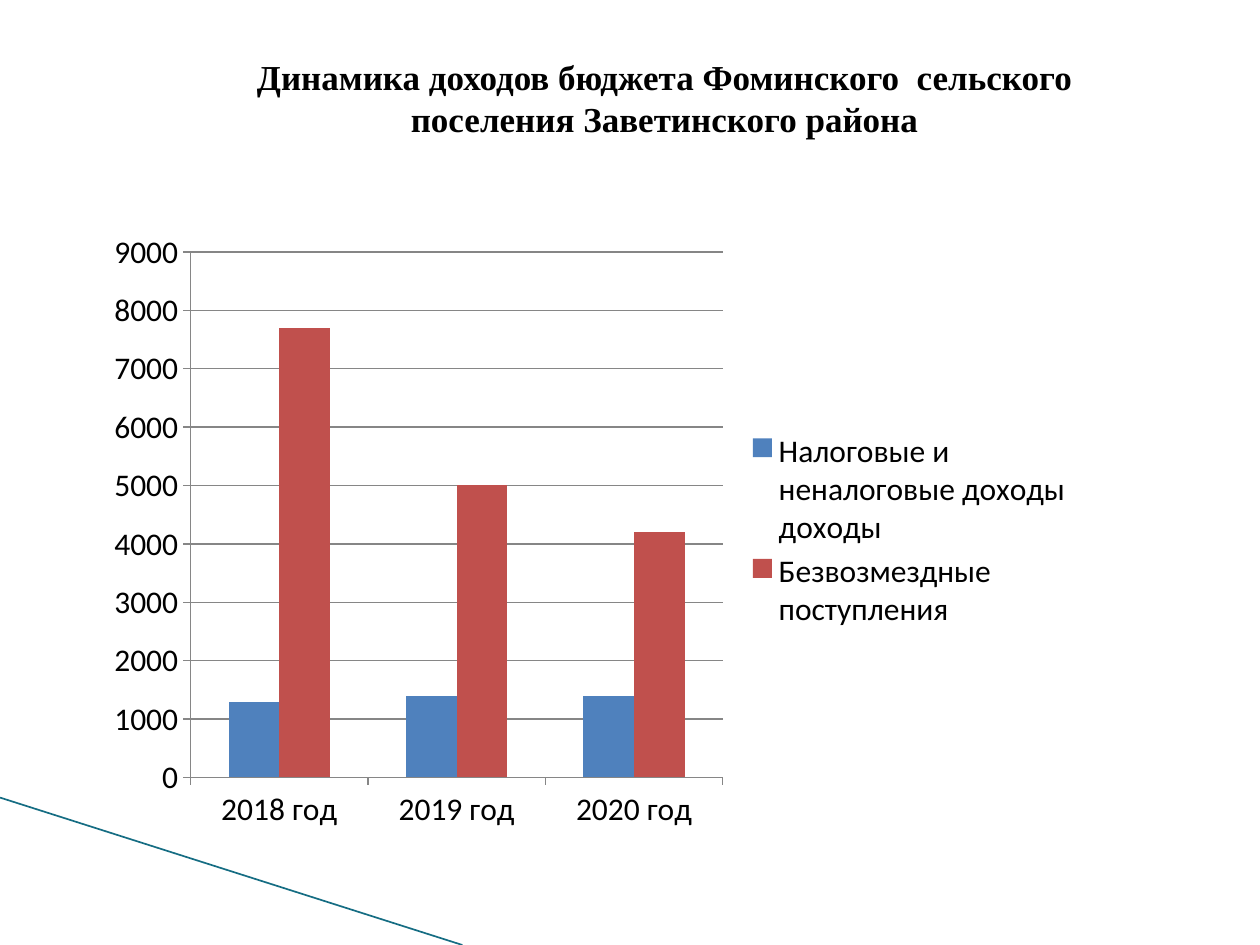
import pptx
import pptx.chart.data
import pptx.dml.color
import pptx.enum.chart
import pptx.enum.shapes
import pptx.enum.text
import pptx.oxml
import pptx.util
from pptx.util import Inches

# Content
TITLE = "Динамика доходов бюджета Фоминского  сельского поселения Заветинского района"
YEARS = ["2018 год", "2019 год", "2020 год"]
SERIES = [
    ("Налоговые и неналоговые доходы доходы", (1300, 1400, 1400), "4F81BD"),
    ("Безвозмездные поступления", (7700, 5000, 4200), "C0504D"),
]
GRAY = "868686"


def color(code):
    return pptx.dml.color.RGBColor.from_string(code)


def style(font, face, size, code="000000", bold=False):
    font.name, font.size, font.bold = face, pptx.util.Pt(size), bold
    font.color.rgb = color(code)


def stroke(line, code, width):
    line.color.rgb = color(code)
    line.width = pptx.util.Pt(width)


def add_text(slide, text, box, face, size, bold=False):
    shape = slide.shapes.add_textbox(*map(Inches, box))
    frame = shape.text_frame
    frame.word_wrap = True
    frame.vertical_anchor = pptx.enum.text.MSO_ANCHOR.TOP
    par = frame.paragraphs[0]
    par.alignment = pptx.enum.text.PP_ALIGN.CENTER
    run = par.add_run()
    run.text = text
    style(run.font, face, size, bold=bold)


deck = pptx.Presentation()
deck.slide_width, deck.slide_height = Inches(10), Inches(7.5)
slide = deck.slides.add_slide(deck.slide_layouts[6])

# Corner line
edge = slide.shapes.add_connector(
    pptx.enum.shapes.MSO_CONNECTOR.STRAIGHT,
    *map(Inches, (0, 6.33, 3.67, 7.5)))
stroke(edge.line, "156D83", 0.95)
edge._element.spPr.append(pptx.oxml.parse_xml(
    '<a:effectLst xmlns:a="http://schemas.openxmlformats.org/drawingml/2006/main"/>'))

# Title
add_text(slide, TITLE, (1.41, 0.39, 7.73, 1.01), "Times New Roman", 20, bold=True)

# Chart
data = pptx.chart.data.CategoryChartData(number_format="General")
data.categories = YEARS
for name, vals, _ in SERIES:
    data.add_series(name, vals)
chart = slide.shapes.add_chart(
    pptx.enum.chart.XL_CHART_TYPE.COLUMN_CLUSTERED,
    *map(Inches, (0.75, 1.75, 7.87, 4.92)), data).chart
chart.has_title = False
style(chart.font, "Calibri", 18)

plot = chart.plots[0]
plot.vary_by_categories = False
plot.gap_width, plot.overlap = 150, 0
for bars, (_, _, code) in zip(plot.series, SERIES):
    bars.format.fill.solid()
    bars.format.fill.fore_color.rgb = color(code)

# Axes and legend
for axis in (chart.category_axis, chart.value_axis):
    style(axis.tick_labels.font, "Calibri", 18)
    stroke(axis.format.line, GRAY, 0.75)
    axis.major_tick_mark = pptx.enum.chart.XL_TICK_MARK.OUTSIDE
scale = chart.value_axis
scale.minimum_scale, scale.maximum_scale, scale.major_unit = 0, 9000, 1000
scale.has_major_gridlines = True
stroke(scale.major_gridlines.format.line, GRAY, 0.75)

chart.has_legend = True
legend = chart.legend
legend.position = pptx.enum.chart.XL_LEGEND_POSITION.RIGHT
legend.include_in_layout = False
style(legend.font, "Calibri", 18)

deck.save("out.pptx")
